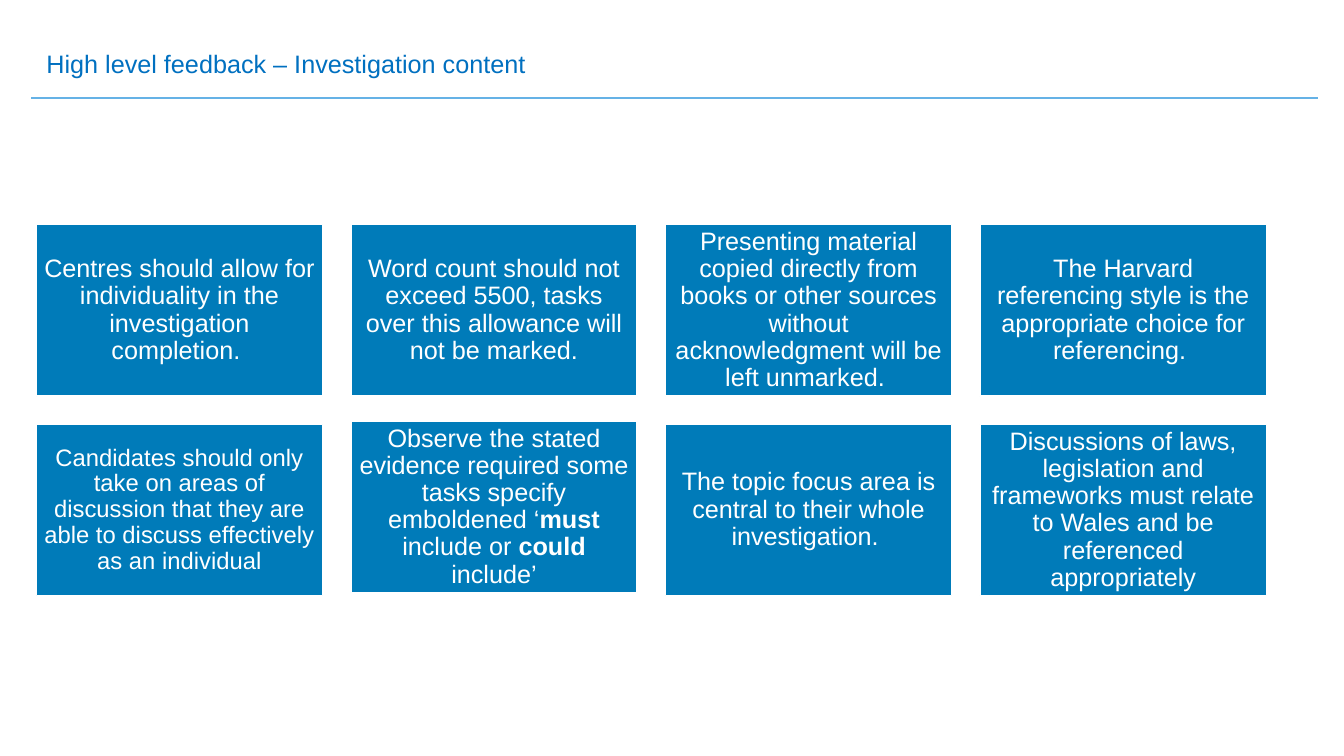
from lxml import etree
from pptx import Presentation
from pptx.dml.color import RGBColor as RGB
from pptx.enum.shapes import MSO_CONNECTOR as LINE, MSO_SHAPE as SHAPE
from pptx.enum.text import MSO_ANCHOR as ANCHOR, MSO_AUTO_SIZE as FIT, PP_ALIGN as ALIGN
from pptx.oxml.ns import qn
from pptx.util import Inches, Pt

COLORS = {"title": "0070C0", "rule": "65B2E6", "card": "007BB9", "white": "FFFFFF"}
FONT = "Arial"
COLUMNS = 4
LEFT, TOP = 0.36, 2.23
CARD_W, CARD_H = 2.84, 1.7
STEP_X, STEP_Y = 3.12, 1.98
INSET = Inches(0.07)

# Each card is a list of runs; every second run is bold.
CARDS = [
    ["Centres should allow for individuality in the investigation completion. "],
    ["Word count should not exceed 5500, tasks over this allowance will not be marked."],
    ["Presenting material copied directly from books or other sources without "
     "acknowledgment will be left unmarked. "],
    ["The Harvard referencing style is the appropriate choice for referencing. "],
    ["Candidates should only take on areas of discussion that they are able to "
     "discuss effectively as an individual"],
    ["Observe the stated evidence required some tasks specify emboldened ‘",
     "must ", "include or ", "could ", "include’"],
    ["The topic focus area is central to their whole investigation. "],
    ["Discussions of laws, legislation and frameworks must relate to Wales and be "
     "referenced appropriately"],
]
SIZES = {4: 17}
RAISED = {5: 0.03}


def set_font(p, size, color):
    p.font.name = FONT
    p.font.size = Pt(size)
    p.font.color.rgb = RGB.from_string(COLORS[color])


prs = Presentation()
prs.slide_width, prs.slide_height = Inches(13.33), Inches(7.5)
s = prs.slides.add_slide(prs.slide_layouts[5])

# Title and the rule below it
title = s.shapes.title
title.left, title.top = Inches(LEFT), Inches(0.43)
title.width, title.height = Inches(5.31), Inches(0.4)
tf = title.text_frame
tf.text = "High level feedback – Investigation content"
tf.word_wrap = True
tf.auto_size = FIT.SHAPE_TO_FIT_TEXT
tf.vertical_anchor = ANCHOR.TOP
p = tf.paragraphs[0]
p.alignment = ALIGN.LEFT
set_font(p, 18, "title")

rule = s.shapes.add_connector(LINE.STRAIGHT, Inches(0.31), Inches(0.97), Inches(13.07), Inches(0.97))
rule.line.color.rgb = RGB.from_string(COLORS["rule"])
rule.line.width = Pt(1.75)
etree.SubElement(rule._element.spPr, qn("a:effectLst"))

# Feedback cards
for i, runs in enumerate(CARDS):
    row, col = divmod(i, COLUMNS)
    x = LEFT + col * STEP_X
    y = TOP + row * STEP_Y - RAISED.get(i, 0)
    card = s.shapes.add_shape(SHAPE.RECTANGLE, Inches(x), Inches(y), Inches(CARD_W), Inches(CARD_H))
    card.shadow.inherit = False
    card.fill.solid()
    card.fill.fore_color.rgb = RGB.from_string(COLORS["card"])
    card.line.color.rgb = RGB.from_string(COLORS["white"])
    card.line.width = Pt(1)
    tf = card.text_frame
    tf.word_wrap = True
    tf.vertical_anchor = ANCHOR.MIDDLE
    tf.margin_left = tf.margin_right = tf.margin_top = tf.margin_bottom = INSET
    p = tf.paragraphs[0]
    p.alignment = ALIGN.CENTER
    p.line_spacing = 0.9
    set_font(p, SIZES.get(i, 18), "white")
    for n, text in enumerate(runs):
        r = p.add_run()
        r.text = text
        r.font.bold = n % 2 == 1

prs.save("out.pptx")
